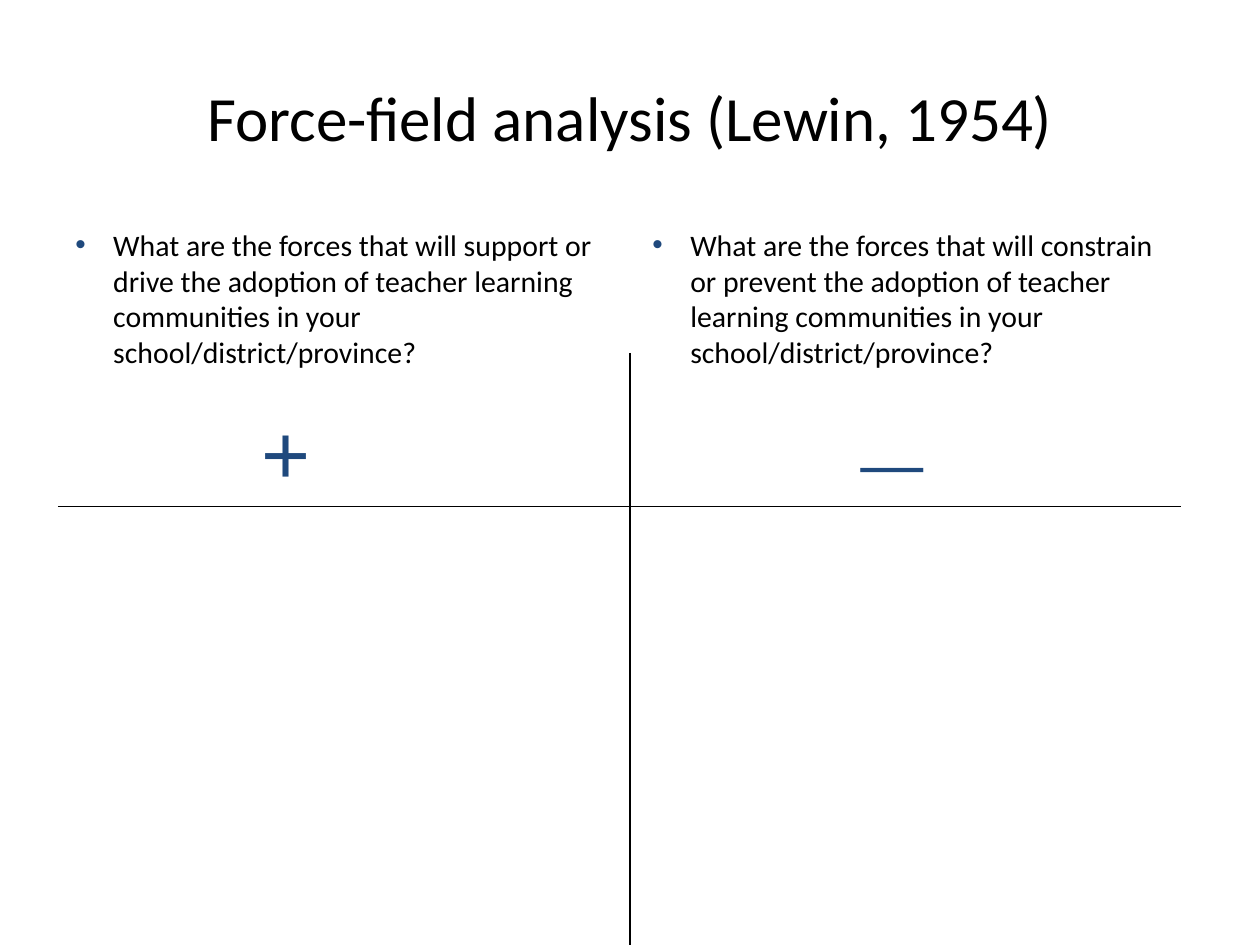
from lxml.etree import SubElement
from pptx import Presentation
from pptx.dml.color import RGBColor
from pptx.enum.shapes import MSO_CONNECTOR as Conn
from pptx.enum.text import MSO_ANCHOR as Anchor, PP_ALIGN as Align
from pptx.oxml.ns import qn
from pptx.util import Inches, Pt

BLACK, BLUE = "000000", "1F497D"


def color(code):
    return RGBColor.from_string(code)


def add_text(slide, box, text, size, font="Calibri", hue=BLACK,
             anchor=Anchor.TOP, align=Align.LEFT, wrap=True, bullet=False):
    frame = slide.shapes.add_textbox(*map(Inches, box)).text_frame
    frame.word_wrap = wrap
    frame.vertical_anchor = anchor
    para = frame.paragraphs[0]
    para.alignment = align
    if bullet:
        add_bullet(para)
    run = para.add_run()
    run.text = text
    run.font.name = font
    run.font.size = Pt(size)
    run.font.color.rgb = color(hue)


def add_bullet(para):
    """Give the paragraph a blue dot and a hanging indent."""
    props = para._p.get_or_add_pPr()
    props.set("marL", str(Inches(0.3)))
    props.set("indent", str(-Inches(0.3)))
    tint = SubElement(props, qn("a:buClr"))
    SubElement(tint, qn("a:srgbClr"), val=BLUE)
    SubElement(props, qn("a:buFont"), typeface="Arial")
    SubElement(props, qn("a:buChar"), char="•")


def add_line(slide, *ends):
    line = slide.shapes.add_connector(Conn.STRAIGHT, *map(Inches, ends))
    line.line.color.rgb = color(BLACK)
    line.line.width = Pt(1)
    SubElement(line._element.spPr, qn("a:effectLst"))


def main():
    deck = Presentation()
    deck.slide_width, deck.slide_height = Inches(10), Inches(7.5)
    slide = deck.slides.add_slide(deck.slide_layouts[6])

    add_text(slide, (0.5, 0.3, 9, 1.25), "Force-field analysis (Lewin, 1954)",
             36, anchor=Anchor.MIDDLE, align=Align.CENTER)
    for left, verbs in ((0.5, "support or drive"),
                        (5.08, "constrain or prevent")):
        add_text(slide, (left, 1.75, 4.42, 4.95),
                 f"What are the forces that will {verbs} the adoption of "
                 "teacher learning communities in your "
                 "school/district/province?", 17, bullet=True)

    add_line(slide, 0.46, 4.02, 9.37, 4.02)
    add_line(slide, 5, 2.8, 5, 7.5)
    add_text(slide, (1.98, 3.13, 1.17, 0.9), "+", 48, "Arial", BLUE,
             anchor=Anchor.BOTTOM)
    add_text(slide, (6.73, 3.31, 0.72, 0.7), "—", 36, "Arial", BLUE,
             wrap=False)
    deck.save("out.pptx")


if __name__ == "__main__":
    main()
